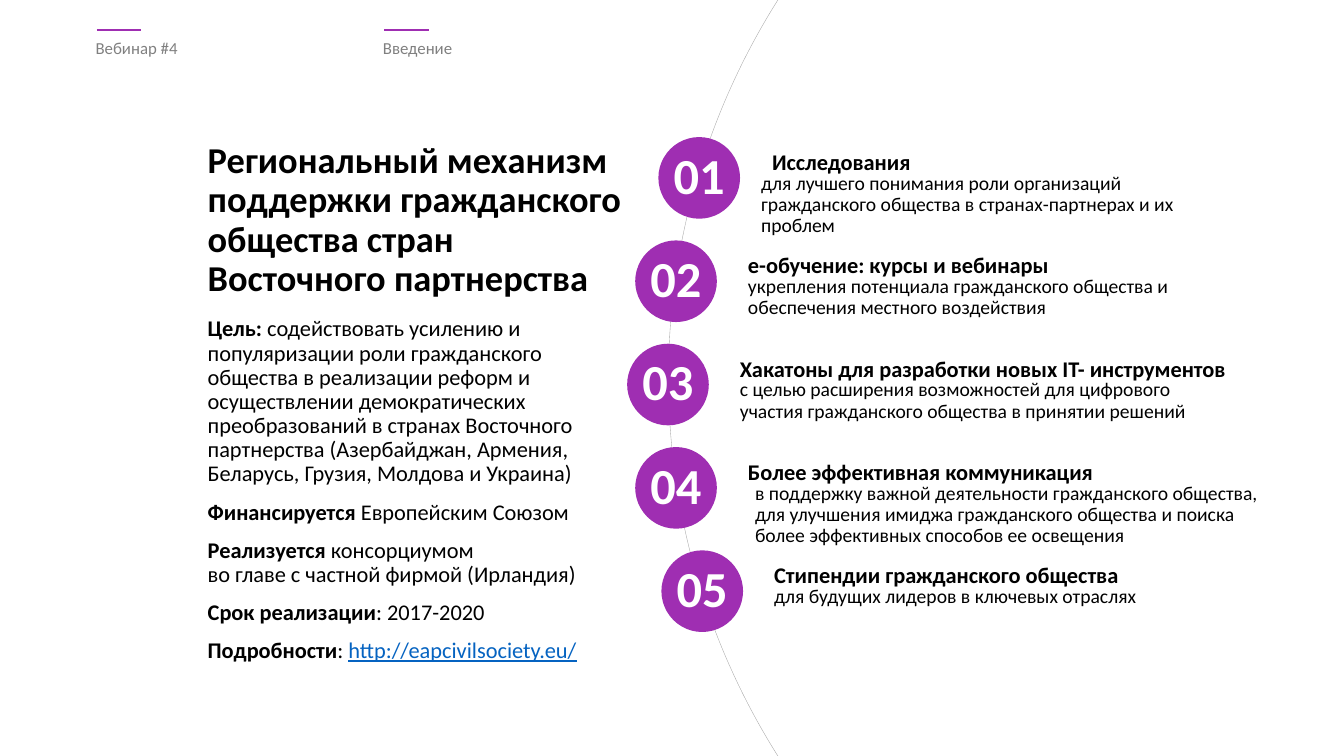
from dataclasses import dataclass

import pptx
import pptx.dml.color
import pptx.enum.shapes
import pptx.enum.text
import pptx.oxml.ns
import pptx.util
from lxml import etree

Inches = pptx.util.Inches
Pt = pptx.util.Pt
Align = pptx.enum.text.PP_ALIGN
Anchor = pptx.enum.text.MSO_ANCHOR
OVAL = pptx.enum.shapes.MSO_SHAPE.OVAL

PURPLE, BLACK, WHITE = "9F2EB2", "000000", "FFFFFF"
GREY, PALE, BLUE = "808080", "A6A6A6", "0563C1"
TOP, STEP, DISC = 1.36, 1.025, 0.81


@dataclass
class Run:
    text: str
    size: float
    color: str = BLACK
    bold: bool = False
    under: bool = False


@dataclass
class Para:
    runs: list[Run]
    align: Align = Align.LEFT


@dataclass
class Item:
    disc: float
    head: str
    head_x: float
    head_w: float
    note: str
    note_x: float
    note_w: float


@dataclass
class Tab:
    x: float
    text: str


ITEMS = [
    Item(6.53, "Исследования", 7.56, 3.87,
         "для лучшего понимания роли организаций гражданского общества "
         "в странах-партнерах и их проблем", 7.45, 4.71),
    Item(6.3, "е-обучение: курсы и вебинары", 7.32, 4.12,
         "укрепления потенциала гражданского общества и обеспечения "
         "местного воздействия", 7.32, 4.59),
    Item(6.22, "Хакатоны для разработки новых IT- инструментов", 7.24, 5.53,
         "с целью расширения возможностей для цифрового участия "
         "гражданского общества в принятии решений", 7.24, 4.68),
    Item(6.3, "Более эффективная коммуникация", 7.32, 4.32,
         "в поддержку важной деятельности гражданского общества, для "
         "улучшения имиджа гражданского общества и поиска более "
         "эффективных способов ее освещения", 7.39, 5.43),
    Item(6.56, "Стипендии гражданского общества", 7.58, 4.31,
         "для будущих лидеров в ключевых отраслях", 7.58, 4.3),
]
TABS = [Tab(0.85, "Вебинар #4"), Tab(3.7, "Введение")]
FACTS = [
    Para([Run("Цель: ", 16, bold=True),
          Run("содействовать усилению и популяризации роли гражданского "
              "общества в реализации реформ и осуществлении демократических "
              "преобразований в странах Восточного партнерства (Азербайджан, "
              "Армения, Беларусь, Грузия, Молдова и Украина)", 16)]),
    Para([Run("Финансируется ", 16, bold=True),
          Run("Европейским Союзом", 16)]),
    Para([Run("Реализуется ", 16, bold=True),
          Run("консорциумом \nво главе с частной фирмой (Ирландия)", 16)]),
    Para([Run("Срок реализации", 16, bold=True),
          Run(": 2017-2020", 16)], Align.JUSTIFY),
    Para([Run("Подробности", 16, bold=True), Run(": ", 16),
          Run("http://eapcivilsociety.eu/", 16, BLUE, under=True)],
         Align.JUSTIFY),
]


def rgb(code: str) -> pptx.dml.color.RGBColor:
    return pptx.dml.color.RGBColor.from_string(code)


def place(shape, x: float, y: float, w: float, h: float) -> None:
    shape.left, shape.top = Inches(x), Inches(y)
    shape.width, shape.height = Inches(w), Inches(h)


def add_run(para, run: Run) -> None:
    for n, part in enumerate(run.text.split("\n")):
        if n:
            para.add_line_break()
        piece = para.add_run()
        piece.text = part
        font = piece.font
        font.name, font.size = "Calibri", Pt(run.size)
        font.bold, font.underline = run.bold, run.under
        font.color.rgb = rgb(run.color)


def write(shape, paras: list[Para], anchor: Anchor = Anchor.TOP) -> None:
    frame = shape.text_frame
    frame.word_wrap = True
    frame.auto_size = pptx.enum.text.MSO_AUTO_SIZE.NONE
    frame.vertical_anchor = anchor
    for n, item in enumerate(paras):
        para = frame.add_paragraph() if n else frame.paragraphs[0]
        props = para._p.get_or_add_pPr()
        props.set("marL", "0")
        props.set("indent", "0")
        etree.SubElement(props, pptx.oxml.ns.qn("a:buNone"))
        para.alignment = item.align
        para.line_spacing = 0.9
        para.space_before = Pt(10 if n else 0)
        for run in item.runs:
            add_run(para, run)


def add_text(slide, x: float, y: float, w: float, h: float,
             para: Para) -> None:
    box = slide.shapes.add_textbox(0, 0, 0, 0)
    place(box, x, y, w, h)
    write(box, [para])


def add_oval(slide, x: float, y: float, size: float):
    oval = slide.shapes.add_shape(OVAL, Inches(x), Inches(y),
                                  Inches(size), Inches(size))
    oval.shadow.inherit = False
    return oval


def add_arc(slide) -> None:
    arc = add_oval(slide, 6.63, -3.27, 14.04)
    arc.fill.background()
    arc.line.color.rgb = rgb(PALE)
    arc.line.width = Pt(0.25)


def add_tab(slide, tab: Tab) -> None:
    x, y = tab.x + 0.11, Inches(0.3)
    add_text(slide, tab.x, 0.35, 2.53, 0.56,
             Para([Run(tab.text, 12, GREY)], Align.JUSTIFY))
    line = slide.shapes.add_connector(
        pptx.enum.shapes.MSO_CONNECTOR.STRAIGHT,
        Inches(x), y, Inches(x + 0.44), y)
    line.line.color.rgb = rgb(PURPLE)
    line.line.width = Pt(1.25)
    etree.SubElement(line._element.spPr, pptx.oxml.ns.qn("a:effectLst"))


def add_item(slide, n: int, item: Item) -> None:
    y = TOP + n * STEP
    add_text(slide, item.head_x, y + 0.09, item.head_w, 0.27,
             Para([Run(item.head, 16, bold=True)]))
    add_text(slide, item.note_x, y + 0.31, item.note_w, 0.39,
             Para([Run(item.note, 14)]))
    disc = add_oval(slide, item.disc, y, DISC)
    disc.fill.solid()
    disc.fill.fore_color.rgb = rgb(PURPLE)
    disc.line.fill.background()
    frame = disc.text_frame
    frame.margin_left = frame.margin_right = 0
    frame.margin_top = frame.margin_bottom = 0
    write(disc, [Para([Run(f"{n + 1:02}", 36, WHITE, True)], Align.CENTER)],
          Anchor.MIDDLE)


def main() -> None:
    deck = pptx.Presentation()
    deck.slide_width, deck.slide_height = Inches(13.33), Inches(7.5)
    slide = deck.slides.add_slide(deck.slide_layouts[1])
    add_arc(slide)
    title, body = slide.shapes.title, slide.placeholders[1]
    place(title, 1.96, 1.36, 4.33, 1.65)
    write(title, [Para([Run("Региональный механизм поддержки гражданского "
                            "общества стран Восточного партнерства",
                            26, bold=True)])])
    place(body, 1.96, 3.1, 3.99, 3.59)
    write(body, FACTS)
    for n, item in enumerate(ITEMS):
        add_item(slide, n, item)
    for tab in TABS:
        add_tab(slide, tab)
    deck.save("out.pptx")


if __name__ == "__main__":
    main()
